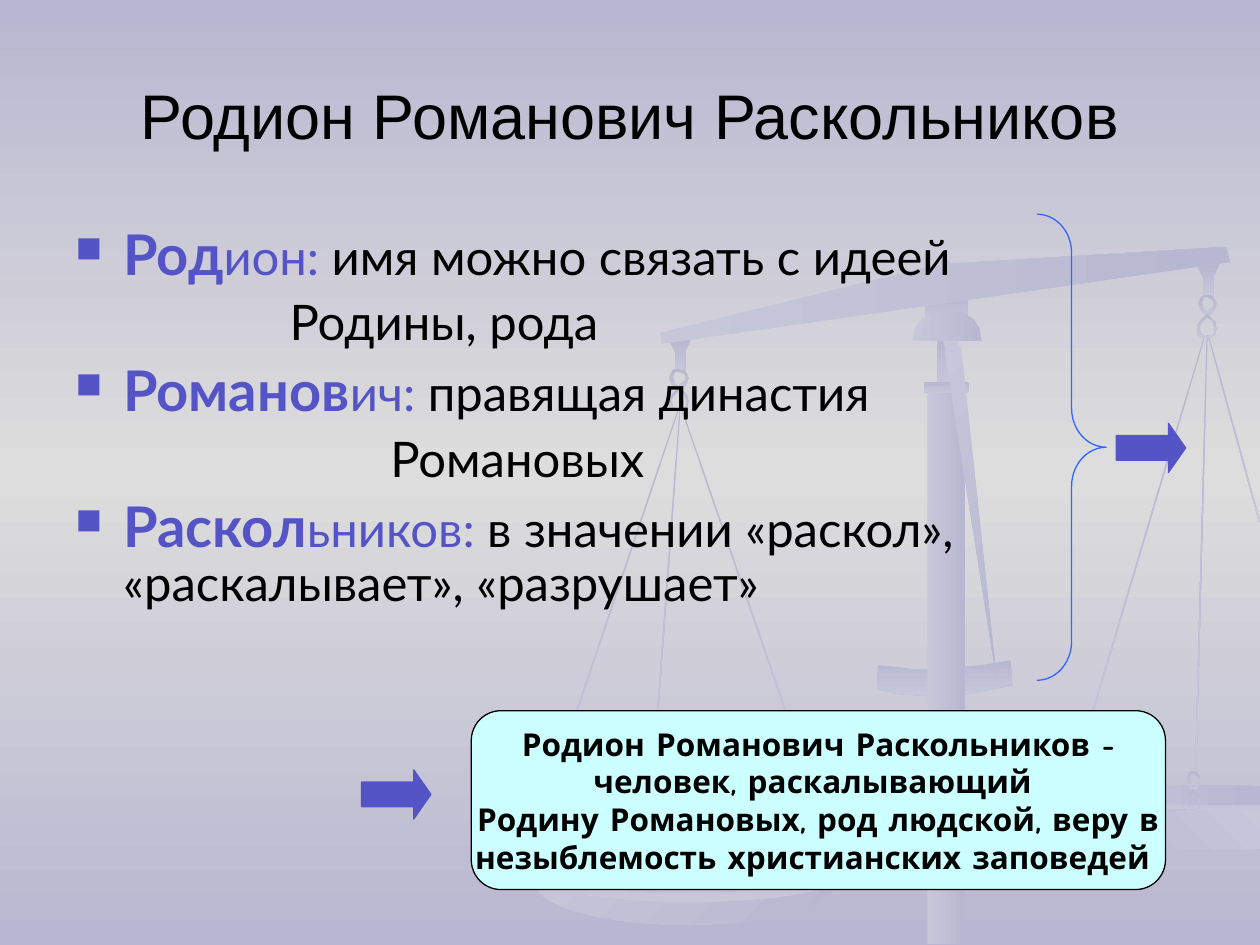
import copy
import dataclasses

import lxml.etree
import pptx
import pptx.dml.color
import pptx.enum.shapes
import pptx.enum.text
import pptx.oxml.ns
import pptx.util

RGBColor = pptx.dml.color.RGBColor
SHAPES = pptx.enum.shapes.MSO_SHAPE
ALIGN = pptx.enum.text.PP_ALIGN
ANCHOR = pptx.enum.text.MSO_ANCHOR

LILAC = RGBColor(0xB8, 0xB7, 0xD1)
PALE_LILAC = RGBColor(0xC7, 0xC7, 0xDA)
GREY = RGBColor(0xDD, 0xDD, 0xDD)
VIOLET = RGBColor(0x54, 0x54, 0xC6)
BLUE = RGBColor(0x33, 0x66, 0xFF)
AQUA = RGBColor(0xCC, 0xFF, 0xFF)
BLACK = RGBColor(0, 0, 0)

DOWN = (LILAC, PALE_LILAC, 90)
ACROSS = (PALE_LILAC, LILAC, 0)
ACROSS_DARK = (LILAC, PALE_LILAC, 0)
DIAGONAL = (PALE_LILAC, LILAC, 45)
RISING = (LILAC, PALE_LILAC, 315)

HOOK = [[(1, 0), (0, .07), (.28, .44), (.28, 1), (.72, 1), (.72, .41)]]
UPPER_LINK = [
    [(.5, 1), (.81, .76), (.94, .53), (1, .41), (.94, .29), (.75, .06), (.44, 0),
     (.25, 0), (.13, .12), (.06, .29), (0, .41), (.13, .7), (.31, .88)],
    [(.5, .12), (.75, .24), (.81, .29), (.81, .53), (.56, .7), (.5, .82),
     (.31, .7), (.25, .53), (.19, .35), (.31, .12)]]
LOWER_LINK = [
    [(0, .84), (.13, .95), (.25, 1), (.56, 1), (.88, .89), (1, .63), (.94, .37),
     (.75, .21), (.5, 0), (.25, .21), (.06, .42), (0, .58)],
    [(.13, .58), (.19, .42), (.31, .32), (.44, .21), (.5, .16), (.75, .26), (.81, .42),
     (.88, .63), (.88, .79), (.75, .89), (.44, .95), (.31, .89), (.19, .84)]]
YOKE = [(6.97, 5.28), (7.24, 5.31), (7.39, 5.31), (7.57, 5.3), (7.78, 5.28), (8.02, 5.24),
        (8.04, 5.44), (7.82, 5.48), (7.68, 5.51), (7.51, 5.52), (7.33, 5.52), (7.14, 5.51),
        (6.96, 5.47)]
PAN_RIM = [(9.58, 6.24), (9.1, 6.24), (8.85, 6.23), (8.65, 6.23), (8.46, 6.24), (8.36, 6.24),
           (8.31, 6.26), (8.27, 6.28), (8.3, 6.32), (8.42, 6.36), (8.63, 6.39), (8.94, 6.42),
           (9.35, 6.44), (9.58, 6.45), (10, 6.45), (10, 6.26), (9.8, 6.26)]
PAN_BOWL = [(8.31, 6.33), (8.35, 6.42), (8.42, 6.49), (8.52, 6.57), (8.65, 6.63), (8.82, 6.68),
            (9.03, 6.72), (9.28, 6.74), (9.57, 6.75), (10, 6.74), (10, 6.43), (9.53, 6.43),
            (9.18, 6.42), (8.86, 6.4), (8.57, 6.37)]
PAN_INSIDE = [(9.56, 6.23), (8.62, 6.23), (8.51, 6.24), (8.39, 6.26), (8.34, 6.28), (8.43, 6.31),
              (8.63, 6.34), (8.93, 6.37), (9.33, 6.38), (9.55, 6.39), (10, 6.39), (10, 6.24)]
BEAM = [(9.73, 1.96), (9.76, 2.08), (5.25, 2.73), (5.24, 2.64), (7.37, 2.12), (7.59, 2.09)]
POINTER = [(7.91, 5.39), (7.5, 2.8), (7.5, 2.76), (7.48, 2.68), (7.6, 2.65), (7.61, 2.74),
           (7.63, 2.77)]
CAP = [(7.52, 2.47), (7.63, 2.48), (7.72, 2.53), (7.77, 2.6), (7.79, 2.71), (7.24, 2.71),
       (7.26, 2.6), (7.32, 2.53), (7.4, 2.48)]


@dataclasses.dataclass
class Box:
    left: float
    top: float
    width: float
    height: float

    def inner(self, left, top, width, height):
        return Box(self.left + left, self.top + top, width, height)

    def lengths(self):
        return [length(side) for side in (self.left, self.top, self.width, self.height)]


def length(inches):
    return pptx.util.Cm(inches * 2.54)


def paint(shape, fill=None, line=None):
    shape.shadow.inherit = False
    if fill is None:
        shape.fill.background()
    elif isinstance(fill, RGBColor):
        shape.fill.solid()
        shape.fill.fore_color.rgb = fill
    else:
        *colors, angle = fill
        shape.fill.gradient()
        shape.fill.gradient_angle = -angle % 360
        for stop, color in zip(shape.fill.gradient_stops, colors):
            stop.color.rgb = color
    if line is None:
        shape.line.fill.background()
    else:
        shape.line.color.rgb = line
        shape.line.width = pptx.util.Pt(0.75)


def add_preset(page, kind, box, fill=None, line=None, adjustments=(), rotation=0):
    shape = page.shapes.add_shape(kind, *box.lengths())
    for index, value in enumerate(adjustments):
        shape.adjustments[index] = value
    shape.rotation = rotation
    paint(shape, fill, line)
    return shape


def add_outline(page, box, contours, fill, scale=(1, 1)):
    placed = [[(length(box.left + x * scale[0]), length(box.top + y * scale[1]))
               for x, y in contour] for contour in contours]
    builder = page.shapes.build_freeform(*placed[0][0], scale=1.0)
    for index, contour in enumerate(placed):
        if index:
            builder.move_to(*contour[0])
        builder.add_line_segments(contour[1:], close=True)
    paint(builder.convert_to_shape(), fill)


def add_span(para, text, font="Lato", size=28, color=BLACK, bold=False):
    span = para.add_run()
    span.text = text
    span.font.name = font
    span.font.size = pptx.util.Pt(size)
    span.font.color.rgb = color
    span.font.bold = bold


def add_bullet(para):
    props = para._p.get_or_add_pPr()
    color = lxml.etree.SubElement(props, pptx.oxml.ns.qn("a:buClr"))
    lxml.etree.SubElement(color, pptx.oxml.ns.qn("a:srgbClr"), val=str(VIOLET))
    lxml.etree.SubElement(props, pptx.oxml.ns.qn("a:buSzPct"), val="65000")
    lxml.etree.SubElement(props, pptx.oxml.ns.qn("a:buChar"), char="■")


def add_background(page):
    fill = page.background.fill
    fill.gradient()
    fill.gradient_angle = 270
    stops = page._element.find(".//" + pptx.oxml.ns.qn("a:gsLst"))
    stops.insert(1, copy.deepcopy(stops[0]))
    for index, color in enumerate((LILAC, GREY, LILAC)):
        fill.gradient_stops[index].position = index / 2
        fill.gradient_stops[index].color.rgb = color


def add_scales(page, box):
    def preset(kind, place, fill=DOWN, **options):
        add_preset(page, kind, box.inner(*place), fill, **options)

    preset(SHAPES.RECTANGLE, (7.34, 2.37, .34, .18))
    preset(SHAPES.OVAL, (7.46, 2.06, .08, .08))
    for left, top, height, rotation in (
            (9.04, 2.6, 3.6, 16.6), (9.53, 2.66, 3.47, 1.5), (9.79, 2.64, 1.53, 344.6),
            (5.98, 3.15, 3.53, 341), (4.79, 3.16, 3.68, 18.6), (5.27, 3.25, 3.31, 4.2)):
        preset(SHAPES.RECTANGLE, (left, top, .01, height), rotation=rotation)
    for contour, fill in ((YOKE, DOWN), (PAN_RIM, DOWN), (PAN_BOWL, RISING),
                          (PAN_INSIDE, ACROSS)):
        add_outline(page, box, [contour], fill)
    for contours, left, top, width, height in (
            (HOOK, 5.31, 2.68, .18, .27), (UPPER_LINK, 5.31, 2.93, .16, .17),
            (LOWER_LINK, 5.31, 3.07, .16, .19), (HOOK, 9.5, 2.09, .18, .27),
            (UPPER_LINK, 9.51, 2.34, .15, .17), (LOWER_LINK, 9.5, 2.49, .16, .19),
            (UPPER_LINK, 9.42, 6.12, .11, .17), (LOWER_LINK, 9.41, 6.26, .12, .19)):
        add_outline(page, box.inner(left, top, width, height), contours, DOWN, (width, height))
    add_outline(page, box, [BEAM], ACROSS)
    preset(SHAPES.OVAL, (4.24, 6.66, 2.4, .68), DIAGONAL)
    preset(SHAPES.OVAL, (4.16, 6.66, 2.61, .5))
    preset(SHAPES.OVAL, (4.24, 6.7, 2.47, .38), ACROSS_DARK)
    preset(SHAPES.RECTANGLE, (7.36, 3.08, .3, 4.41), ACROSS)
    preset(SHAPES.RECTANGLE, (7.44, 2.68, .13, .42))
    preset(SHAPES.ROUNDED_RECTANGLE, (7.33, 3.03, .36, .09))
    add_outline(page, box, [POINTER], DIAGONAL)
    add_outline(page, box, [CAP], ACROSS)


def add_title(page, box):
    frame = page.shapes.add_textbox(*box.lengths()).text_frame
    frame.word_wrap = True
    frame.vertical_anchor = ANCHOR.MIDDLE
    frame.paragraphs[0].alignment = ALIGN.CENTER
    add_span(frame.paragraphs[0], "Родион Романович Раскольников", font="Arial", size=36)


def add_name_meanings(page, box):
    frame = page.shapes.add_textbox(*box.lengths()).text_frame
    frame.word_wrap = True
    lines = (("Род", "ион:", " имя можно связать с идеей", .38),
             ("", "", "Родины, рода", 1.7),
             ("Романов", "ич:", " правящая династия", .38),
             ("", "", "Романовых", 2.5),
             ("Раскол", "ьников:", " в значении «раскол», «раскалывает», «разрушает»", .38))
    for index, (root, ending, meaning, margin) in enumerate(lines):
        para = frame.add_paragraph() if index else frame.paragraphs[0]
        para.line_spacing = 0.9
        para.space_before = pptx.util.Pt(6.5)
        props = para._p.get_or_add_pPr()
        props.set("marL", str(length(margin)))
        if root:
            props.set("indent", str(-length(margin)))
            add_bullet(para)
            add_span(para, root, size=32, color=VIOLET, bold=True)
            add_span(para, ending, color=VIOLET)
        add_span(para, meaning)


def add_arrow(page, box):
    add_preset(page, SHAPES.RIGHT_ARROW, box, VIOLET, VIOLET, (.5, .35))


def add_summary_brace(page, box):
    add_preset(page, SHAPES.RIGHT_BRACE, box.inner(0, 0, .55, box.height), line=BLUE,
               adjustments=(.56, .5))
    add_arrow(page, box.inner(.63, 1.66, .55, .39))


def add_conclusion(page, box):
    add_arrow(page, box.inner(0, .47, .55, .39))
    callout = add_preset(page, SHAPES.ROUNDED_RECTANGLE, box.inner(.87, 0, 5.51, box.height),
                         AQUA, BLACK)
    frame = callout.text_frame
    frame.word_wrap = False
    frame.vertical_anchor = ANCHOR.MIDDLE
    lines = ("Родион Романович Раскольников -", "человек, раскалывающий ",
             "Родину Романовых, род людской, веру в", "незыблемость христианских заповедей ")
    for index, text in enumerate(lines):
        para = frame.add_paragraph() if index else frame.paragraphs[0]
        para.alignment = ALIGN.CENTER
        add_span(para, text, font="Comic Neue", size=18, bold=True)


def main():
    deck = pptx.Presentation()
    deck.slide_width, deck.slide_height = length(10), length(7.5)
    page = deck.slides.add_slide(deck.slide_layouts[6])
    add_background(page)
    add_scales(page, Box(0, 0, 10, 7.5))
    add_title(page, Box(.5, .44, 9, .93))
    add_name_meanings(page, Box(.5, 1.75, 9, 4.95))
    add_summary_brace(page, Box(8.23, 1.7, 1.18, 3.7))
    add_conclusion(page, Box(2.87, 5.64, 6.38, 1.42))
    deck.save("out.pptx")


if __name__ == "__main__":
    main()
